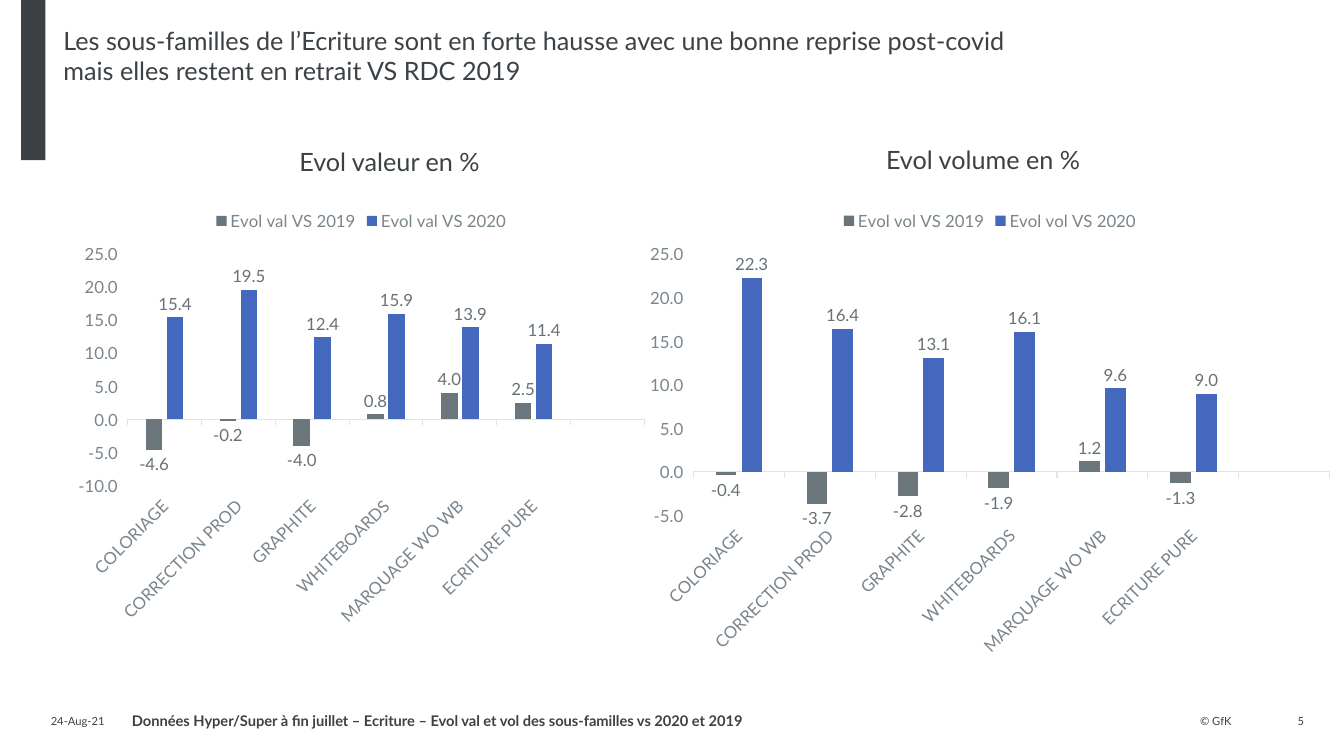
from dataclasses import dataclass

from pptx import Presentation
from pptx import util as u
from pptx.chart import data
from pptx.dml import color
from pptx.enum import chart as ch
from pptx.enum import shapes, text

Pt = u.Pt


@dataclass(frozen=True)
class Theme:
    """Colours, font and type sizes of the slide."""
    font: str = "Lato"
    ink: str = "3B4145"
    axis_text: str = "79858D"
    label_text: str = "677178"
    axis_line: str = "E0E3E5"
    vs_2019: str = "6A757C"
    vs_2020: str = "4368BD"
    heading: float = 18
    chart_text: float = 12
    source: float = 10.5
    small: float = 8


THEME = Theme()
FAMILIES = ["COLORIAGE", "CORRECTION PROD", "GRAPHITE", "WHITEBOARDS",
            "MARQUAGE WO WB", "ECRITURE PURE", ""]
VALUE_SERIES = {
    "Evol val VS 2019": [-4.6, -0.2, -4, 0.8, 4, 2.5, None],
    "Evol val VS 2020": [15.4, 19.5, 12.4, 15.9, 13.9, 11.4, None],
}
VOLUME_SERIES = {
    "Evol vol VS 2019": [-0.4, -3.7, -2.8, -1.9, 1.2, -1.3, None],
    "Evol vol VS 2020": [22.3, 16.4, 13.1, 16.1, 9.6, 9, None],
}


def rgb(code):
    """Turn a hex code into a colour."""
    return color.RGBColor.from_string(code)


def style_font(font, size, code=THEME.ink, bold=False):
    """Apply the theme font with a size and colour."""
    font.name, font.size, font.bold = THEME.font, Pt(size), bold
    font.color.rgb = rgb(code)


def fill_text(holder, words, size, align=text.PP_ALIGN.LEFT,
              anchor=text.MSO_ANCHOR.TOP, bold=False):
    """Write one paragraph into a shape without margins."""
    frame = holder.text_frame
    frame.text = words
    frame.word_wrap = True
    frame.auto_size = text.MSO_AUTO_SIZE.NONE
    frame.vertical_anchor = anchor
    frame.margin_left = frame.margin_right = 0
    frame.margin_top = frame.margin_bottom = 0
    paragraph = frame.paragraphs[0]
    paragraph.alignment = align
    style_font(paragraph.font, size, bold=bold)


def add_label(slide, box, words, size, **layout):
    """Add a text box at the given box."""
    fill_text(slide.shapes.add_textbox(*map(Pt, box)), words, size, **layout)


def add_header(slide, left, top, width, height):
    """Place the dark marker and the title to its right."""
    marker = slide.shapes.add_shape(
        shapes.MSO_SHAPE.RECTANGLE, Pt(left), Pt(top), Pt(17.3), Pt(height))
    marker.shadow.inherit = False
    marker.fill.solid()
    marker.fill.fore_color.rgb = rgb(THEME.ink)
    marker.line.fill.background()

    title = slide.shapes.title
    title.left, title.top = Pt(left + 30.2), Pt(top + 18)
    title.width, title.height = Pt(width - 30.2), Pt(72)
    fill_text(title, "Les sous-familles de l’Ecriture sont en forte hausse avec "
              "une bonne reprise post-covid mais elles restent en retrait "
              "VS RDC 2019", THEME.heading)


def style_axes(chart, minimum):
    """Format the family axis and the percentage axis."""
    families, percent = chart.category_axis, chart.value_axis
    for axis in (families, percent):
        axis.has_major_gridlines = False
        axis.major_tick_mark = ch.XL_TICK_MARK.OUTSIDE
        axis.minor_tick_mark = ch.XL_TICK_MARK.NONE
        style_font(axis.tick_labels.font, THEME.chart_text, THEME.axis_text)
    families.tick_label_position = ch.XL_TICK_LABEL_POSITION.LOW
    families.format.line.color.rgb = rgb(THEME.axis_line)
    families.format.line.width = Pt(0.75)
    families._element.txPr.bodyPr.set("rot", "-2700000")
    percent.format.line.fill.background()
    percent.minimum_scale, percent.maximum_scale = minimum, 25
    percent.major_unit = 5
    percent.tick_labels.number_format = "#,##0.0"
    percent.tick_labels.number_format_is_linked = False


def add_evolution(slide, box, heading, heading_offset, series, minimum):
    """Place a heading and its clustered column chart in the box."""
    left, top, width, height = box
    dx, dy, heading_width = heading_offset
    add_label(slide, (left + dx, top + dy, heading_width, 27.4),
              heading, THEME.heading)

    evolution = data.CategoryChartData(number_format="#,##0.0")
    evolution.categories = FAMILIES
    for name, values in series.items():
        evolution.add_series(name, values)
    chart = slide.shapes.add_chart(
        ch.XL_CHART_TYPE.COLUMN_CLUSTERED, *map(Pt, (left, top, width, height)),
        evolution).chart
    style_font(chart.font, THEME.chart_text)
    chart.has_title = False
    chart.has_legend = True
    chart.legend.position = ch.XL_LEGEND_POSITION.TOP
    chart.legend.include_in_layout = False
    style_font(chart.legend.font, THEME.chart_text, THEME.axis_text)
    style_axes(chart, minimum)

    plot = chart.plots[0]
    plot.vary_by_categories = False
    plot.gap_width, plot.overlap = 219, -27
    for columns, code in zip(plot.series, (THEME.vs_2019, THEME.vs_2020)):
        columns.invert_if_negative = False
        columns.format.fill.solid()
        columns.format.fill.fore_color.rgb = rgb(code)
        labels = columns.data_labels
        labels.show_value = True
        labels.position = ch.XL_LABEL_POSITION.OUTSIDE_END
        labels.number_format = "#,##0.0"
        labels.number_format_is_linked = False
        style_font(labels.font, THEME.chart_text, THEME.label_text)


def add_footer(slide, left, top, height):
    """Place the date, source, copyright and page number on one line."""
    right, bottom = text.PP_ALIGN.RIGHT, text.MSO_ANCHOR.BOTTOM
    for dx, width, words in ((0, 59.8, "24-Aug-21"),
                             (825.1, 39.6, "© GfK"),
                             (865.4, 51.1, "5")):
        add_label(slide, (left + dx, top, width, height), words, THEME.small,
                  align=right, anchor=bottom)
    add_label(slide, (left + 79.2, top, 643, height),
              "Données Hyper/Super à fin juillet – Ecriture – Evol val et vol "
              "des sous-familles vs 2020 et 2019", THEME.source,
              anchor=text.MSO_ANCHOR.MIDDLE, bold=True)


def main():
    """Build and save the slide."""
    deck = Presentation()
    deck.slide_width, deck.slide_height = Pt(960), Pt(540)
    slide = deck.slides.add_slide(deck.slide_layouts.get_by_name("Title Only"))
    add_header(slide, 15.1, 0, 714.9, 114.5)
    add_evolution(slide, (47.5, 142.5, 421.2, 311), "Evol valeur en %",
                  (166.3, -38.1, 135), VALUE_SERIES, -10)
    add_evolution(slide, (454.3, 142.5, 505.7, 332.6), "Evol volume en %",
                  (178.6, -39.5, 145), VOLUME_SERIES, -5)
    add_footer(slide, 15.1, 509, 10.8)
    deck.save("out.pptx")


if __name__ == "__main__":
    main()
